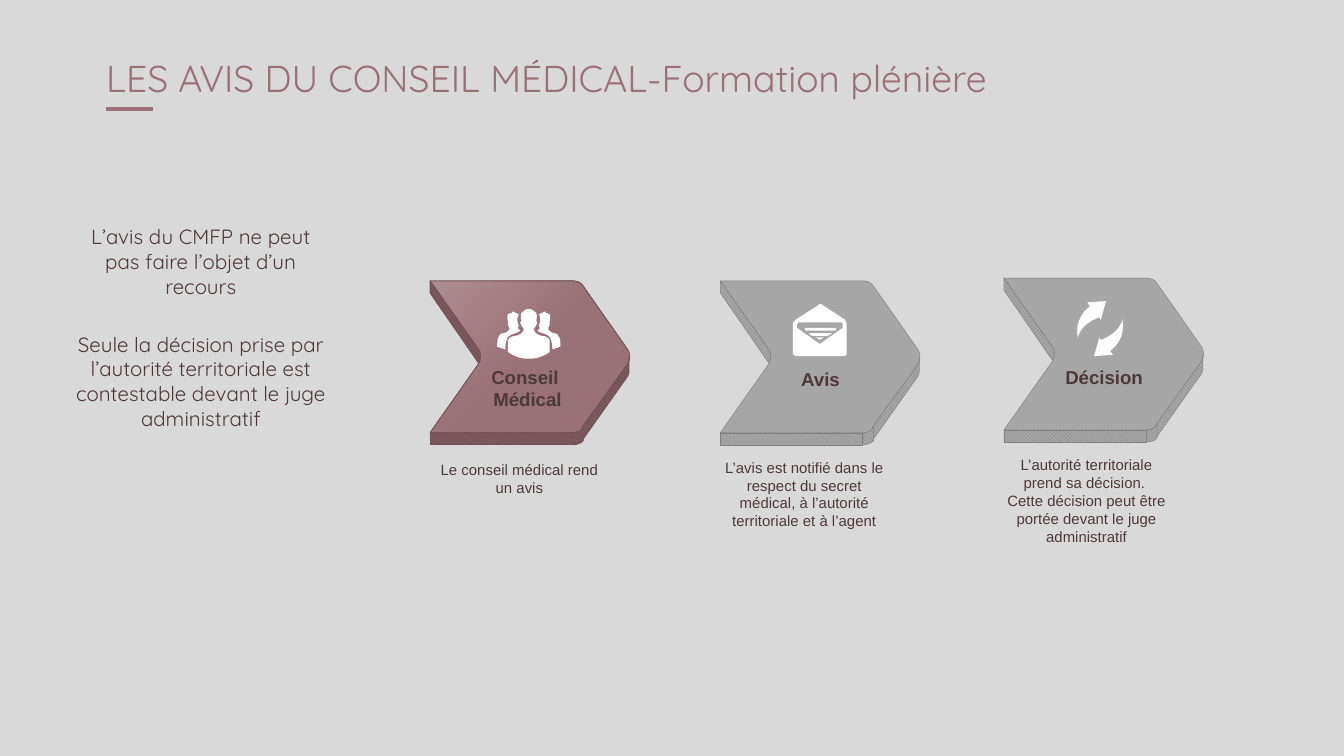
from pptx import Presentation
from pptx import util as u
from pptx.dml import color
from pptx.enum import dml, shapes, text
from pptx.oxml import xmlchemy

Inches = u.Inches
RGB = color.RGBColor
BACKGROUND = RGB(0xD9, 0xD9, 0xD9)
ROSE = RGB(0x99, 0x71, 0x77)
LIGHT_ROSE = RGB(0xAD, 0x8D, 0x92)
DARK_ROSE = RGB(0x74, 0x53, 0x58)
INK = RGB(0x4D, 0x38, 0x3B)
GRAY = RGB(0xA6, 0xA6, 0xA6)
DARK_GRAY = RGB(0x80, 0x80, 0x80)
WHITE = RGB(0xFF, 0xFF, 0xFF)

TITLE = "LES AVIS DU CONSEIL MÉDICAL-Formation plénière"
NOTES = [
    "L’avis du CMFP ne peut pas faire l’objet d’un recours",
    "Seule la décision prise par l’autorité territoriale est contestable devant le juge administratif",
]
STEPS = [
    dict(origin=(3.2, 2.09), icon="people", icon_at=(0.5, 0.21), label_at=(0.16, 0.63), detail_at=(0.03, 1.34),
         label=["Conseil ", "Médical"], detail=["Le conseil médical rend un avis"], active=True),
    dict(origin=(5.36, 2.09), icon="envelope", icon_at=(0.54, 0.17), label_at=(0.18, 0.65), detail_at=(-0.01, 1.32),
         label=["Avis"], active=False,
         detail=["L’avis est notifié dans le respect du secret médical, à l’autorité territoriale et à l’agent"]),
    dict(origin=(7.47, 2.07), icon="cycle", icon_at=(0.52, 0.17), label_at=(0.18, 0.65), detail_at=(-0.02, 1.32),
         label=["Décision"], active=False,
         detail=["L’autorité territoriale prend sa décision. ",
                 "Cette décision peut être portée devant le juge administratif"]),
]

FACE = [(0, 0), (1.06, 0), (1.09, 0, 1.12, 0.01, 1.14, 0.04), (1.47, 0.51),
        (1.49, 0.54, 1.49, 0.59, 1.47, 0.62), (1.14, 1.09), (1.12, 1.12, 1.09, 1.13, 1.06, 1.13),
        (0, 1.13), (0.36, 0.62), (0.38, 0.59, 0.38, 0.54, 0.36, 0.51)]
RIGHT_SIDE = [(1.47, 0.71), (1.48, 0.69, 1.48, 0.68, 1.48, 0.66), (1.48, 0.57),
              (1.48, 0.59, 1.48, 0.6, 1.47, 0.62), (1.13, 1.09), (1.13, 1.19)]
CORNER = [(1.14, 1.19), (1.12, 1.21, 1.09, 1.22, 1.06, 1.22), (1.06, 1.13),
          (1.09, 1.13, 1.12, 1.12, 1.14, 1.09)]
NOTCH = [(0.36, 0.51), (0.38, 0.54, 0.38, 0.58, 0.36, 0.61), (0, 0.09), (0, 0)]

SIDE_PERSON = [(0.13, 0.18), (0.16, 0.17), (0.17, 0.16), (0.15, 0.14), (0.16, 0.13), (0.15, 0.09),
               (0.15, 0.08, 0.15, 0.05, 0.16, 0.04), (0.14, 0.03), (0.12, 0.02), (0.11, 0.02), (0.11, 0.03),
               (0.11, 0.03, 0.09, 0.03, 0.08, 0.04), (0.07, 0.06, 0.08, 0.09, 0.08, 0.09), (0.08, 0.12),
               (0.09, 0.14), (0.09, 0.15), (0.08, 0.17, 0.07, 0.17, 0.05, 0.18),
               (0.04, 0.18, 0.02, 0.18, 0.01, 0.21), (0, 0.22, 0, 0.25, 0, 0.28), (0.06, 0.3),
               (0.06, 0.25, 0.07, 0.23, 0.07, 0.23), (0.08, 0.19, 0.11, 0.19, 0.13, 0.18)]
HALF_PERSON = [(0.23, 0), (0.22, 0), (0.22, 0, 0.2, 0.01, 0.18, 0.03), (0.17, 0.05, 0.18, 0.09, 0.18, 0.09),
               (0.17, 0.1), (0.18, 0.12), (0.18, 0.12, 0.19, 0.14, 0.2, 0.15), (0.19, 0.17), (0.18, 0.18),
               (0.17, 0.19, 0.16, 0.19, 0.14, 0.2), (0.13, 0.2, 0.1, 0.2, 0.08, 0.23),
               (0.08, 0.25, 0.08, 0.29, 0.08, 0.32), (0.11, 0.34, 0.16, 0.37, 0.23, 0.37)]
ENVELOPE = [
    [(0.39, 0.12), (0.22, 0.01), (0.21, 0, 0.2, 0, 0.19, 0.01), (0.02, 0.12), (0.01, 0.13, 0, 0.14, 0, 0.15),
     (0, 0.37), (0, 0.38, 0.02, 0.39, 0.03, 0.39), (0.37, 0.39), (0.39, 0.39, 0.4, 0.38, 0.4, 0.37),
     (0.4, 0.15), (0.4, 0.14, 0.39, 0.13, 0.39, 0.12)],
    [(0.37, 0.18), (0.2, 0.3), (0.03, 0.18), (0.03, 0.16), (0.03, 0.15, 0.04, 0.14, 0.04, 0.14),
     (0.36, 0.14), (0.37, 0.14, 0.37, 0.15, 0.37, 0.16)],
    [(0.09, 0.2), (0.32, 0.2), (0.32, 0.18), (0.09, 0.18)],
    [(0.14, 0.24), (0.26, 0.24), (0.29, 0.22), (0.12, 0.22)],
    [(0.2, 0.27), (0.23, 0.25), (0.17, 0.25)],
]
CYCLE_ARROW = [(0.2, 0.14), (0.24, 0), (0.1, 0.01), (0.12, 0.04), (0.09, 0.06, 0, 0.14, 0.03, 0.28),
               (0.03, 0.28, 0.03, 0.18, 0.19, 0.12)]


def flatten(outline, count=8):
    points = []
    for step in outline:
        if len(step) == 2:
            points.append(step)
            continue
        controls = [points[-1], step[:2], step[2:4], step[4:]]
        for i in range(1, count + 1):
            t = i / count
            weights = ((1 - t) ** 3, 3 * t * (1 - t) ** 2, 3 * t * t * (1 - t), t ** 3)
            points.append(tuple(sum(w * c[axis] for w, c in zip(weights, controls)) for axis in (0, 1)))
    return points


def mirror(points, width):
    return [(width - x, y) for x, y in points]


def icon_contours():
    side, half, arrow = flatten(SIDE_PERSON), flatten(HALF_PERSON), flatten(CYCLE_ARROW)
    return {
        "people": [side, mirror(side, 0.47), half + mirror(half, 0.47)[::-1]],
        "envelope": [flatten(outline) for outline in ENVELOPE],
        "cycle": [arrow, [(0.39 - x, 0.41 - y) for x, y in arrow]],
    }


def add_outline(slide, contours, origin):
    placed = [[(Inches(origin[0] + x), Inches(origin[1] + y)) for x, y in points] for points in contours]
    builder = slide.shapes.build_freeform(*placed[0][0])
    for index, points in enumerate(placed):
        if index:
            builder.move_to(*points[0])
        builder.add_line_segments(points[1:], close=True)
    shape = builder.convert_to_shape()
    shape.shadow.inherit = False
    return shape


def paint(shape, fill, line=None, width=0.25):
    shape.fill.solid()
    shape.fill.fore_color.rgb = fill
    if line is None:
        shape.line.fill.background()
    else:
        shape.line.color.rgb = line
        shape.line.width = u.Pt(width)


def add_text(slide, paragraphs, box, font="Arial", size=8, ink=INK, bold=False,
             align=text.PP_ALIGN.CENTER, spacing=None, gap=0):
    frame = slide.shapes.add_textbox(*map(Inches, box)).text_frame
    frame.word_wrap = True
    frame.margin_left = frame.margin_right = frame.margin_top = frame.margin_bottom = 0
    for index, content in enumerate(paragraphs):
        paragraph = frame.paragraphs[0] if index == 0 else frame.add_paragraph()
        paragraph.alignment = align
        if spacing:
            paragraph.line_spacing = u.Pt(spacing)
        if index:
            paragraph.space_before = u.Pt(gap)
        run = paragraph.add_run()
        run.text = content
        run.font.name, run.font.size, run.font.bold = font, u.Pt(size), bold
        run.font.color.rgb = ink


def add_arrow(slide, origin, active):
    x, y = origin
    face = add_outline(slide, [flatten(FACE)], origin)
    if active:
        line, width, front, back = DARK_ROSE, 0.5, ROSE, DARK_ROSE
    else:
        line, width, front, back = DARK_GRAY, 0.25, DARK_GRAY, GRAY
    paint(face, GRAY, line, width)
    if active:
        face.fill.gradient()
        face.fill.gradient_angle = 315
        for stop, rgb, position in zip(face.fill.gradient_stops, (LIGHT_ROSE, ROSE), (0, 0.5)):
            stop.color.rgb, stop.position = rgb, position
    base = slide.shapes.add_shape(shapes.MSO_SHAPE.RECTANGLE, *map(Inches, (x, y + 1.13, 1.06, 0.09)))
    base.shadow.inherit = False
    down = dml.MSO_PATTERN.DARK_DOWNWARD_DIAGONAL
    up = dml.MSO_PATTERN.DARK_UPWARD_DIAGONAL
    sides = [(base, down)]
    for outline, pattern in ((RIGHT_SIDE, down), (CORNER, up), (NOTCH, up)):
        sides.append((add_outline(slide, [flatten(outline)], origin), pattern))
    for shape, pattern in sides:
        paint(shape, back, line, width)
        shape.fill.patterned()
        shape.fill.pattern = pattern
        shape.fill.fore_color.rgb, shape.fill.back_color.rgb = front, back


def main():
    presentation = Presentation()
    presentation.slide_width = Inches(10)
    presentation.slide_height = presentation.slide_width * 9 // 16
    slide = presentation.slides.add_slide(presentation.slide_layouts[6])
    slide.background.fill.solid()
    slide.background.fill.fore_color.rgb = BACKGROUND

    rule = slide.shapes.add_connector(shapes.MSO_CONNECTOR.STRAIGHT, *map(Inches, (0.79, 0.81, 1.14, 0.81)))
    rule.line.color.rgb, rule.line.width = ROSE, u.Pt(2.25)
    rule.line._get_or_add_ln().getparent().append(xmlchemy.OxmlElement("a:effectLst"))

    add_text(slide, [TITLE], (0.79, 0.37, 7.45, 0.51), font="Quicksand", size=20, ink=ROSE,
             align=text.PP_ALIGN.LEFT, spacing=27)
    add_text(slide, NOTES, (0.53, 1.67, 1.93, 1.6), font="Quicksand", size=11, spacing=13.2, gap=17.9)

    icons = icon_contours()
    for step in STEPS:
        x, y = step["origin"]
        add_arrow(slide, (x, y), step["active"])
        icon_x, icon_y = step["icon_at"]
        paint(add_outline(slide, icons[step["icon"]], (x + icon_x, y + icon_y)), WHITE)
        for part, width, height, size in (("label", 1.13, 0.42, 10), ("detail", 1.27, 0.49, 8)):
            left, top = step[part + "_at"]
            add_text(slide, step[part], (x + left, y + top, width, height), size=size, bold=part == "label")

    presentation.save("out.pptx")


if __name__ == "__main__":
    main()
